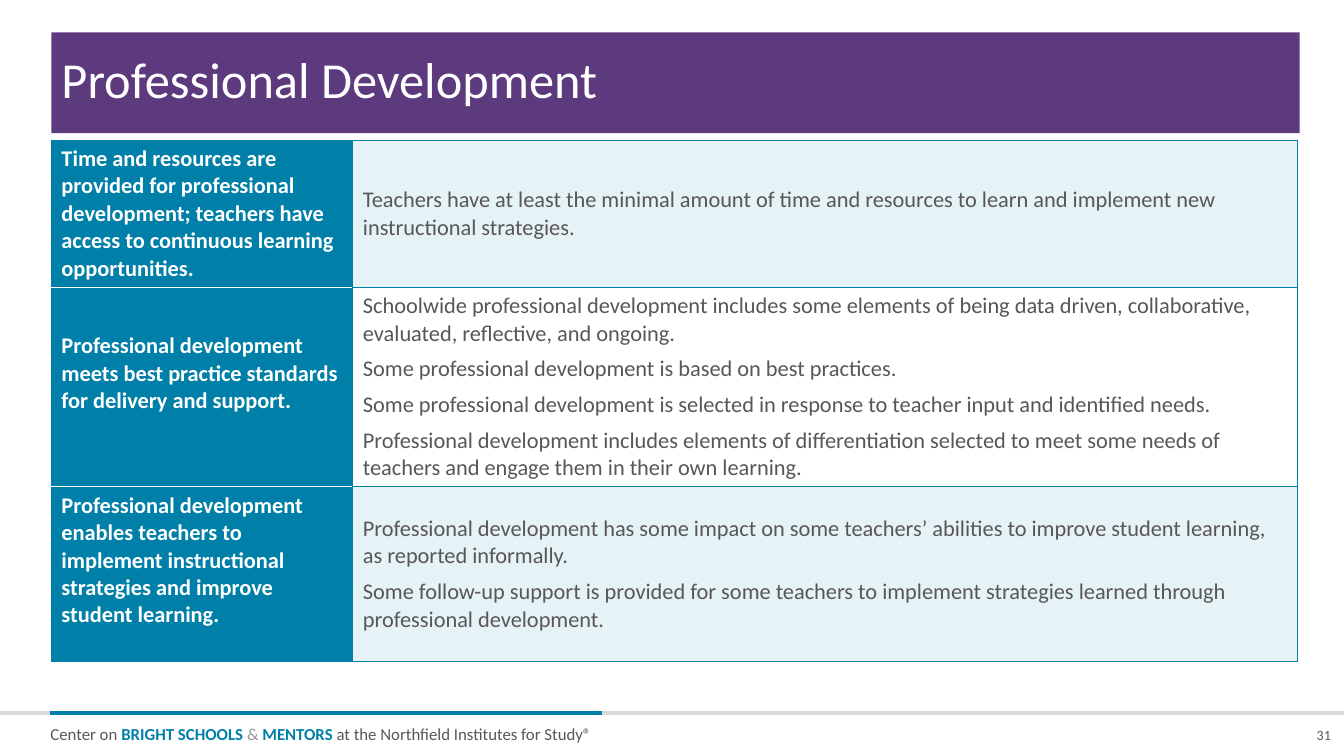
import pptx
import pptx.util
import pptx.dml.color
import pptx.enum.shapes
import pptx.enum.text
import pptx.oxml
import pptx.oxml.ns
import lxml.etree

Inches, Pt = pptx.util.Inches, pptx.util.Pt
RGBColor = pptx.dml.color.RGBColor
ALIGN, ANCHOR = pptx.enum.text.PP_ALIGN, pptx.enum.text.MSO_ANCHOR
qn = pptx.oxml.ns.qn

FACE = "Calibri"
PURPLE = RGBColor(0x5D, 0x39, 0x7E)
TEAL = RGBColor(0x00, 0x80, 0xA8)
PALE = RGBColor(0xE5, 0xF2, 0xF6)
WHITE = RGBColor(0xFF, 0xFF, 0xFF)
INK = RGBColor(0x59, 0x56, 0x5A)
GREY = RGBColor(0x93, 0x95, 0x98)
RULE = RGBColor(0xD9, 0xD9, 0xD9)

# Each row: height, bottom margin of the heading cell, heading, statements
ROWS = [
    (1.46, 0.05,
     "Time and resources are provided for professional development; "
     "teachers have access to continuous learning opportunities.",
     ["Teachers have at least the minimal amount of time and resources to "
      "learn and implement new instructional strategies."]),
    (1.97, 0.32,
     "Professional development meets best practice standards for delivery "
     "and support.",
     ["Schoolwide professional development includes some elements of being "
      "data driven, collaborative, evaluated, reflective, and ongoing.",
      "Some professional development is based on best practices.",
      "Some professional development is selected in response to teacher "
      "input and identified needs.",
      "Professional development includes elements of differentiation selected "
      "to meet some needs of teachers and engage them in their own learning."]),
    (1.73, 0.32,
     "Professional development enables teachers to implement instructional "
     "strategies and improve student learning.",
     ["Professional development has some impact on some teachers’ abilities "
      "to improve student learning, as reported informally.",
      "Some follow-up support is provided for some teachers to implement "
      "strategies learned through professional development."]),
]

CREDIT = [("Center on ", INK, False), ("BRIGHT SCHOOLS ", TEAL, True),
          ("& ", GREY, False), ("MENTORS", TEAL, True),
          (" at the Northfield Institutes for Study®", INK, False)]


def style(font, size, color, bold=False):
    font.name, font.size, font.bold = FACE, Pt(size), bold
    font.color.rgb = color


def inset(frame, left, top, right, bottom):
    frame.margin_left, frame.margin_top = Inches(left), Inches(top)
    frame.margin_right, frame.margin_bottom = Inches(right), Inches(bottom)


def add_title(slide, x, y, w, h):
    title = slide.shapes.title
    title.left, title.top = Inches(x), Inches(y)
    title.width, title.height = Inches(w), Inches(h)
    title.fill.solid()
    title.fill.fore_color.rgb = PURPLE
    frame = title.text_frame
    frame.text = "Professional Development"
    frame.vertical_anchor = ANCHOR.MIDDLE
    inset(frame, 0.1, 0.04, 0.15, 0.04)
    para = frame.paragraphs[0]
    para.alignment, para.line_spacing = ALIGN.LEFT, 0.9
    style(para.font, 36, WHITE)


def edge(cell, top, bottom):
    """Give the cell its borders: teal sides, chosen top and bottom."""
    props = cell._tc.get_or_add_tcPr()
    sides = [("L", TEAL), ("R", TEAL), ("T", top), ("B", bottom)]
    for spot, (side, color) in enumerate(sides):
        line = lxml.etree.Element(qn("a:ln" + side), w=str(Pt(0.75)))
        fill = lxml.etree.SubElement(line, qn("a:solidFill"))
        lxml.etree.SubElement(fill, qn("a:srgbClr"), val=str(color))
        props.insert(spot, line)


def fill_cell(cell, texts, back, color, bold, gap):
    cell.fill.solid()
    cell.fill.fore_color.rgb = back
    cell.vertical_anchor = ANCHOR.MIDDLE
    cell.text = "\n".join(texts)
    for para in cell.text_frame.paragraphs:
        para.space_before = Pt(gap)
        style(para.font, 16, color, bold)


def add_grid(slide, x, y, w, head):
    tall = sum(row[0] for row in ROWS)
    table = slide.shapes.add_table(len(ROWS), 2, Inches(x), Inches(y),
                                   Inches(w), Inches(tall)).table
    table.first_row = table.horz_banding = False
    table.columns[0].width = Inches(head)
    table.columns[1].width = Inches(w - head)
    last = len(ROWS) - 1
    for i, (height, foot, label, texts) in enumerate(ROWS):
        table.rows[i].height = Inches(height)
        left, right = table.cell(i, 0), table.cell(i, 1)
        fill_cell(left, [label], TEAL, WHITE, True, 0)
        left.margin_bottom = Inches(foot)
        edge(left, WHITE if i else TEAL, WHITE if i < last else TEAL)
        fill_cell(right, texts, WHITE if i % 2 else PALE, INK, False, 6)
        edge(right, TEAL, TEAL)


def add_rule(slide, x, y, w, color):
    line = slide.shapes.add_connector(
        pptx.enum.shapes.MSO_CONNECTOR.STRAIGHT,
        Inches(x), Inches(y), Inches(x + w), Inches(y))
    line.line.color.rgb, line.line.width = color, Pt(3)
    lxml.etree.SubElement(line._element.spPr, qn("a:effectLst"))


def add_note(slide, x, y, w, h):
    """Add a text box without margins and return its frame."""
    frame = slide.shapes.add_textbox(Inches(x), Inches(y),
                                     Inches(w), Inches(h)).text_frame
    inset(frame, 0, 0, 0, 0)
    frame.word_wrap = False
    return frame


def add_footer(slide, x, y, w, h):
    # Rules
    add_rule(slide, x, y, w, RULE)
    add_rule(slide, x + 0.5, y, 5.47, TEAL)
    # Credit line
    para = add_note(slide, x + 0.5, y + 0.06, 5.47, 0.23).paragraphs[0]
    para.line_spacing = 1.25
    for text, color, bold in CREDIT:
        run = para.add_run()
        run.text = text
        style(run.font, 12, color, bold)
    # Slide number
    frame = add_note(slide, x + w - 0.3, y + h - 0.3, 0.17, 0.17)
    frame.vertical_anchor = ANCHOR.BOTTOM
    para = frame.paragraphs[0]
    para.text, para.alignment = "31", ALIGN.RIGHT
    style(para.font, 10, INK)


def main():
    deck = pptx.Presentation()
    deck.slide_width, deck.slide_height = Inches(13.33), Inches(7.5)
    slide = deck.slides.add_slide(deck.slide_layouts[5])
    add_title(slide, 0.51, 0.32, 12.38, 1)
    add_grid(slide, 0.51, 1.39, 12.36, 2.99)
    add_footer(slide, 0, 7.07, 13.33, 0.43)
    deck.save("out.pptx")


if __name__ == "__main__":
    main()
